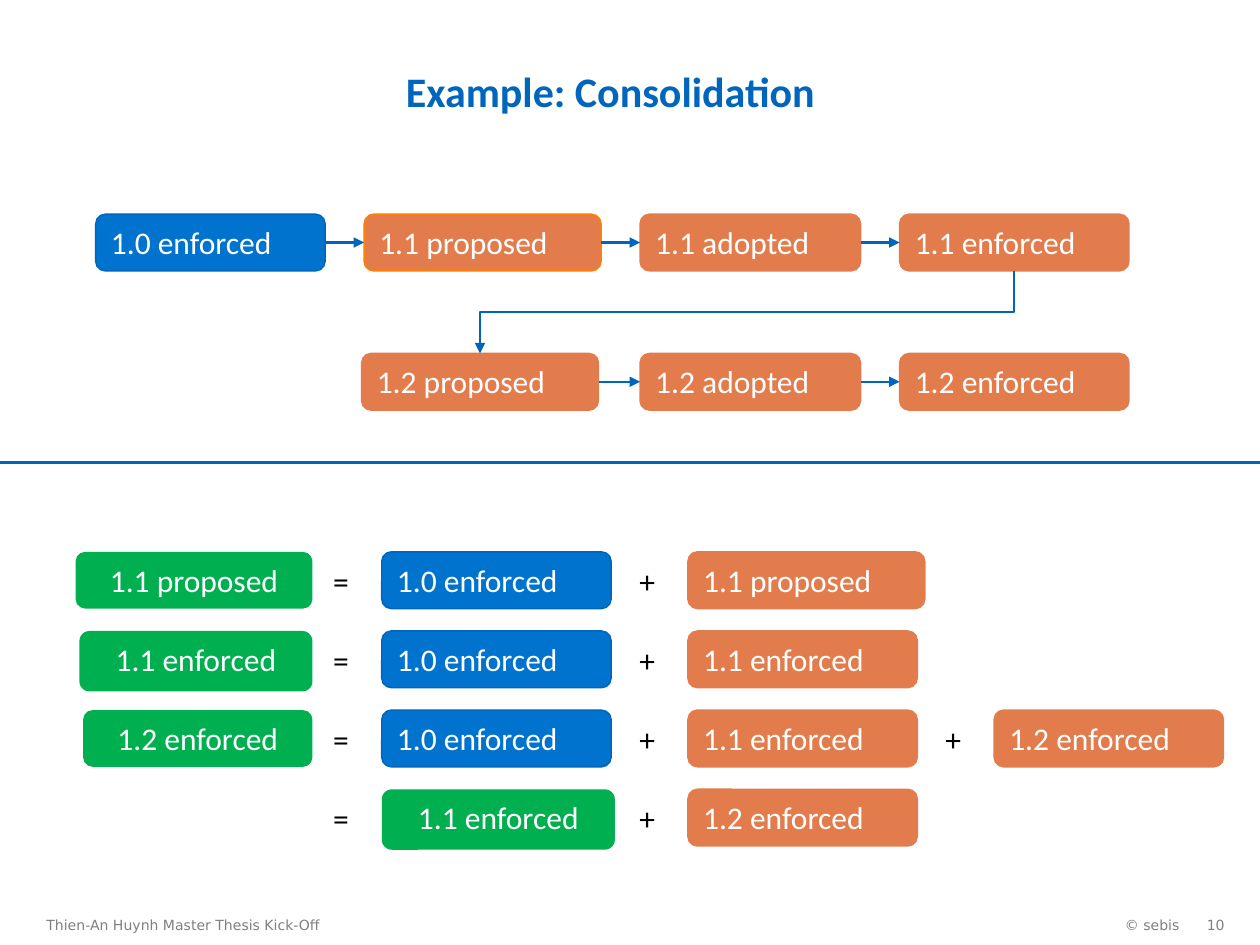
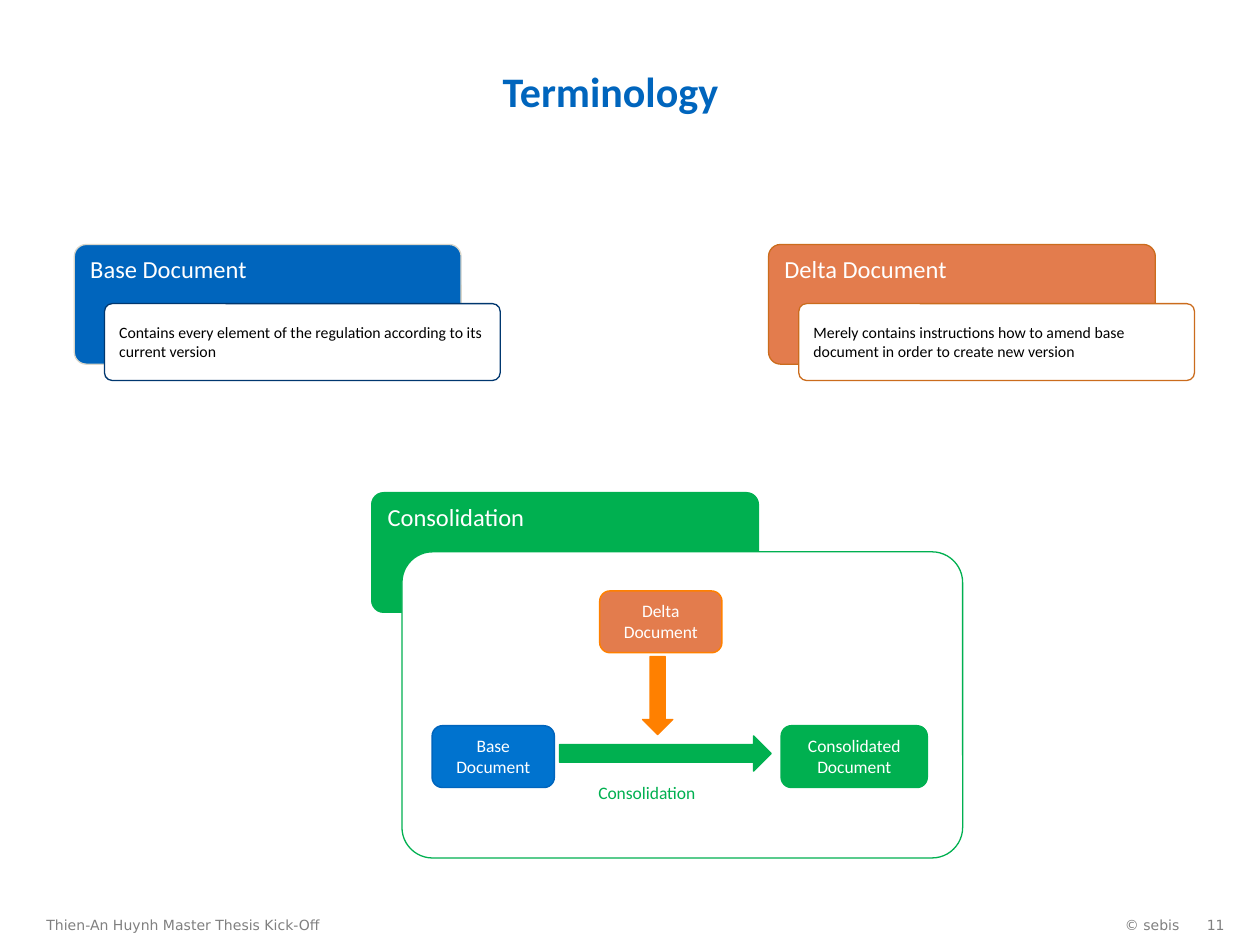
from dataclasses import dataclass
from itertools import pairwise

from lxml.etree import SubElement
from pptx import Presentation
from pptx.dml.color import RGBColor
from pptx.enum.shapes import MSO_CONNECTOR, MSO_SHAPE
from pptx.enum.text import MSO_ANCHOR, PP_ALIGN
from pptx.oxml.ns import qn
from pptx.util import Inches, Pt

COLUMNS, ROWS = 100, 75
TOP, LEFT, BOTTOM, RIGHT = range(4)


@dataclass(frozen=True)
class Theme:
    """Colours, fonts and type sizes shared by the slides."""
    blue: str = "0065BD"
    base: str = "0073CF"
    delta: str = "E37C4D"
    orange: str = "FF8000"
    rust: str = "CB6C1D"
    green: str = "00B050"
    navy: str = "00376F"
    sand: str = "DAD7CB"
    grey: str = "808080"
    white: str = "FFFFFF"
    black: str = "000000"
    body_font: str = "Calibri"
    footer_font: str = "DejaVu Sans"
    title_size: int = 24
    step_size: int = 18
    heading_size: int = 14
    label_size: int = 10
    note_size: int = 9
    footer_size: int = 8
    arrow_width: float = 1.35
    step_border: float = 0.85
    card_border: float = 0.75


THEME = Theme()


def write(frame, text, size, color, font=THEME.body_font, bold=False,
          align=PP_ALIGN.LEFT, anchor=MSO_ANCHOR.TOP, insets=(0.1, 0.05, 0.1, 0.05)):
    """Fill a text frame with one paragraph per line of text."""
    frame.word_wrap = True
    frame.vertical_anchor = anchor
    (frame.margin_left, frame.margin_top,
     frame.margin_right, frame.margin_bottom) = map(Inches, insets)
    frame.text = text
    for paragraph in frame.paragraphs:
        paragraph.alignment = align
        for run in paragraph.runs:
            run.font.size = Pt(size)
            run.font.name = font
            run.font.bold = bold
            run.font.color.rgb = RGBColor.from_string(color)


class Deck:
    """Draws themed elements on the current slide of a presentation."""

    def __init__(self, theme):
        """Open an empty presentation with the slide grid."""
        self.theme = theme
        self.presentation = Presentation()
        self.presentation.slide_width = Inches(10)
        self.presentation.slide_height = Inches(7.5)
        self.column = self.presentation.slide_width / COLUMNS
        self.row = self.presentation.slide_height / ROWS
        self.shapes = None

    def place(self, x, y, width, height):
        """Turn columns and rows into slide lengths."""
        return (round(x * self.column), round(y * self.row),
                round(width * self.column), round(height * self.row))

    def slide(self, title, number):
        """Start a slide with its title and footer."""
        theme = self.theme
        layout = self.presentation.slide_layouts[6]
        self.shapes = self.presentation.slides.add_slide(layout).shapes
        self.text((1.2, 2.8, 94.5, 6.4), title, theme.title_size, theme.blue, bold=True,
                  align=PP_ALIGN.CENTER, anchor=MSO_ANCHOR.BOTTOM, insets=(0.1, 0, 0.1, 0))
        footer = dict(size=theme.footer_size, color=theme.grey,
                      font=theme.footer_font, anchor=MSO_ANCHOR.MIDDLE)
        self.text((2.7, 71.8, 47.3, 3.2), "Thien-An Huynh Master Thesis Kick-Off", **footer)
        self.text((77, 71.8, 17.6, 3.2), "© sebis", align=PP_ALIGN.RIGHT, **footer)
        self.text((94.5, 71.8, 2.7, 3.2), str(number), align=PP_ALIGN.RIGHT,
                  insets=(0, 0.05, 0, 0.05), **footer)

    def text(self, area, words, size, color, **style):
        """Add a text box."""
        write(self.shapes.add_textbox(*self.place(*area)).text_frame,
              words, size, color, **style)

    def shape(self, kind, area, fill, border=None, width=THEME.card_border, corner=None):
        """Add a filled shape with an optional border."""
        shape = self.shapes.add_shape(kind, *self.place(*area))
        shape.shadow.inherit = False
        shape.fill.solid()
        shape.fill.fore_color.rgb = RGBColor.from_string(fill)
        if border:
            shape.line.color.rgb = RGBColor.from_string(border)
            shape.line.width = Pt(width)
        else:
            shape.line.fill.background()
        if corner is not None:
            shape.adjustments[0] = corner
        return shape

    def box(self, area, words, fill, border=None, size=THEME.step_size, align=PP_ALIGN.LEFT):
        """Add a rounded box with white text."""
        box = self.shape(MSO_SHAPE.ROUNDED_RECTANGLE, area, fill, border,
                         self.theme.step_border)
        write(box.text_frame, words, size, self.theme.white, align=align)
        return box

    def card(self, x, y, heading, fill, border, body_border, body_size, note=""):
        """Add a headed card with an overlapping white body."""
        theme = self.theme
        head = self.shape(MSO_SHAPE.ROUNDED_RECTANGLE, (x, y, 30.7, 9.5),
                          fill, border, corner=0.1)
        write(head.text_frame, heading, theme.heading_size, theme.white)
        body = self.shape(MSO_SHAPE.ROUNDED_RECTANGLE, (x + 2.4, y + 4.7, *body_size),
                          theme.white, body_border, corner=0.1)
        if note:
            write(body.text_frame, note, theme.note_size, theme.black,
                  anchor=MSO_ANCHOR.MIDDLE)

    def line(self, kind=MSO_CONNECTOR.STRAIGHT, ends=(0, 0, 0, 0), arrow=True):
        """Add a blue line between two grid points."""
        line = self.shapes.add_connector(kind, *self.place(*ends))
        line.line.color.rgb = RGBColor.from_string(self.theme.blue)
        line.line.width = Pt(self.theme.arrow_width)
        if arrow:
            SubElement(line.line._get_or_add_ln(), qn("a:tailEnd"), type="triangle")
        SubElement(line._element.spPr, qn("a:effectLst"))
        return line

    def join(self, source, target):
        """Point an arrow from one box to the box on its right."""
        arrow = self.line()
        arrow.begin_connect(source, RIGHT)
        arrow.end_connect(target, LEFT)

    def step_down(self, source, target):
        """Point an elbow arrow from a box to one below and to its left."""
        start_x, start_y = source.left + source.width // 2, source.top + source.height
        end_x, end_y = target.left + target.width // 2, target.top
        run, drop = start_x - end_x, end_y - start_y
        arrow = self.line(MSO_CONNECTOR.ELBOW)
        arrow.left = (start_x + end_x - drop) // 2
        arrow.top = (start_y + end_y - run) // 2
        arrow.width, arrow.height = drop, run
        arrow.rotation = 90


def consolidation_example(deck):
    """Draw the version chain and the sums that consolidate it."""
    theme = deck.theme
    deck.slide("Example: Consolidation", 10)
    widths = {"enforced": 18.2, "proposed": 18.8, "adopted": 17.5}

    def version(x, y, words, fill=theme.delta, border=theme.delta):
        """Add one version box, as wide as its state needs."""
        return deck.box((x, y, widths[words.split()[1]], 4.5), words, fill, border)

    def consolidated(x, y, words, width, height):
        """Add one green box for a consolidated version."""
        deck.box((x, y, width, height), words, theme.green, align=PP_ALIGN.CENTER)

    first_row, second_row = 17, 28.05
    adopted_x, enforced_x = 50.8, 71.4
    first_chain = [
        version(7.6, first_row, "1.0 enforced", theme.base, theme.blue),
        version(28.9, first_row, "1.1 proposed", border=theme.orange),
        version(adopted_x, first_row, "1.1 adopted"),
        version(enforced_x, first_row, "1.1 enforced")]
    second_chain = [
        version(28.7, second_row, "1.2 proposed"),
        version(adopted_x, second_row, "1.2 adopted"),
        version(enforced_x, second_row, "1.2 enforced")]
    for chain in (first_chain, second_chain):
        for source, target in pairwise(chain):
            deck.join(source, target)
    deck.step_down(first_chain[-1], second_chain[0])
    deck.line(ends=(0, 36.7, COLUMNS, 36.7), arrow=False)

    operand_x, operand_pitch, result_right = 30.3, 24.3, 24.8
    sum_top, sum_pitch = 43.8, 6.28
    base, interim = "1.0 enforced", ("1.1 enforced", 18.5, 4.8)
    sums = [
        (("1.1 proposed", 18.8, 4.5), base, ["1.1 proposed"]),
        (interim, base, ["1.1 enforced"]),
        (("1.2 enforced", 18.2, 4.5), base, ["1.1 enforced", "1.2 enforced"]),
        (None, interim, ["1.2 enforced"])]
    for index, (result, start, deltas) in enumerate(sums):
        y = sum_top + index * sum_pitch
        if result:
            consolidated(result_right - result[1], y, *result)
        if start == base:
            version(operand_x, y, base, theme.base, theme.blue)
        else:
            consolidated(operand_x, y, *start)
        for place, delta in enumerate(deltas, 1):
            version(operand_x + place * operand_pitch, y, delta)
        for place, sign in enumerate(["="] + ["+"] * len(deltas)):
            deck.text((operand_x - 4.85 + place * operand_pitch, y + 0.3, 4.1, 4),
                      sign, theme.step_size, theme.black)


def terminology(deck):
    """Draw the three terms as cards and the consolidation flow."""
    theme = deck.theme
    deck.slide("Terminology", 11)
    note_size = (31.4, 6.1)
    deck.card(5.9, 19.4, "Base Document", theme.blue, theme.sand, theme.navy, note_size,
              "Contains every element of the regulation according to its current version")
    deck.card(61, 19.4, "Delta Document", theme.delta, theme.rust, theme.rust, note_size,
              "Merely contains instructions how to amend base document "
              "in order to create new version")
    deck.card(29.5, 39.1, "Consolidation", theme.green, theme.green, theme.green,
              (44.5, 24.3))

    flow_y, height = 57.6, 4.9
    for x, y, width, words, fill, border in [
            (34.3, flow_y, 9.7, "Base\nDocument", theme.base, theme.blue),
            (47.6, 46.9, 9.7, "Delta\nDocument", theme.delta, theme.orange),
            (62, flow_y, 11.6, "Consolidated\nDocument", theme.green, theme.green)]:
        deck.box((x, y, width, height), words, fill, border,
                 theme.label_size, PP_ALIGN.CENTER)
    deck.shape(MSO_SHAPE.RIGHT_ARROW, (44.4, 58.4, 16.8, 2.8), theme.green, theme.green)
    deck.shape(MSO_SHAPE.DOWN_ARROW, (51, 52.1, 2.4, 6.2), theme.orange, theme.orange)
    deck.text((46.5, 61.6, 11.4, 2.7), "Consolidation", theme.label_size, theme.green)


def main():
    """Build and save the slides."""
    deck = Deck(THEME)
    consolidation_example(deck)
    terminology(deck)
    deck.presentation.save("out.pptx")


if __name__ == "__main__":
    main()
